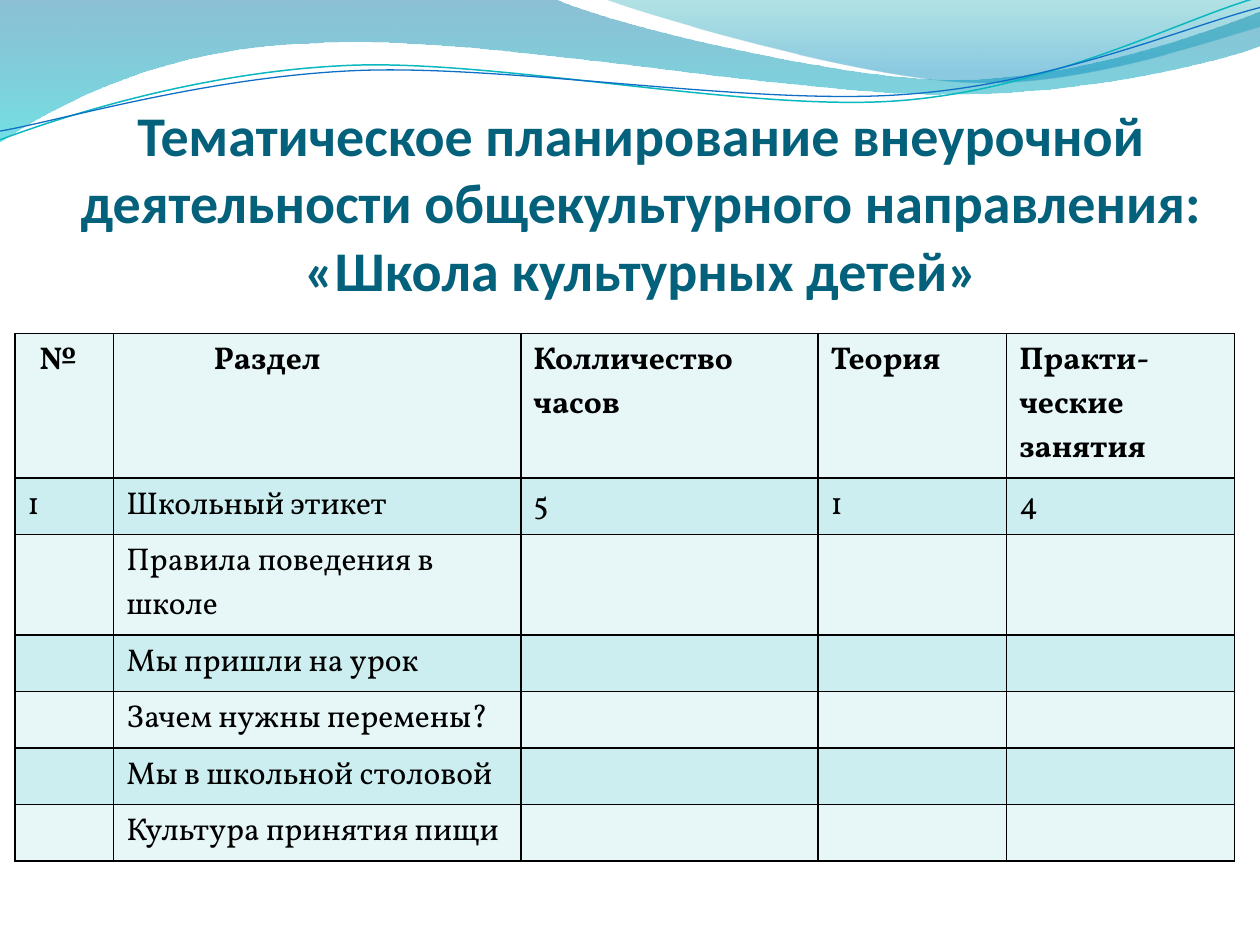
from lxml import etree
from pptx import Presentation
from pptx import util as u
from pptx.dml.color import RGBColor
from pptx.enum import text
from pptx.oxml.ns import qn

COLORS = {
    "title": "04617B", "ink": "000000", "pale": "E7F7F8", "band": "CCEEF1",
    "deep": "0074A1", "aqua": "00C6CF", "teal": "00A1A9", "sky": "008BBF",
    "teal_line": "0AB8BF", "blue_line": "0F6FC6",
}

WIDE_WAVE = [
    (0, 0), (316.8, -0.7),
    (342.7, 12.2, 478.1, 45.4, 545.8, 45.4), (614.2, 45.4, 689.8, 18.7, 720, 6.5),
    (720.7, 25.9),
    (707.8, 31.7, 626.4, 54.7, 537.1, 54), (447.8, 54, 275, 20.2, 185, 24.5),
    (92.9, 25.9, 33.1, 59.8, -0.7, 81.4), (0, 0),
]
RIGHT_WAVE = [
    (344.9, -0.7), (366.5, 7.9, 491, 44.6, 553.7, 46.8),
    (616.3, 49.7, 691.9, 23, 720, 15.1), (720, 0), (344.9, -0.7),
]
TEAL_CURVE = [
    (0, 79.9), (34.6, 67, 113.8, 41, 199.4, 37.4),
    (284.4, 33.8, 427, 64.1, 513.4, 57.6), (599.8, 51.1, 675.4, 10.8, 718.6, -1.4),
]
BLUE_CURVE = [
    (0, 74.9), (33.8, 69.1, 118.1, 43.9, 203.8, 40.3),
    (290.2, 36.7, 429.8, 60.5, 516.2, 54), (601.9, 48.2, 677.5, 15.1, 720, 4.3),
]

HEADERS = ["№", "Раздел", "Колличество часов", "Теория", "Практи-ческие занятия"]
HEADER_INDENTS = [7, 50, 0, 0, 0]
TOPICS = ["Правила поведения в школе", "Мы пришли на урок", "Зачем нужны перемены?",
          "Мы в школьной столовой", "Культура принятия пищи"]
ROWS = [HEADERS, ["1", "Школьный этикет", "5", "1", "4"]]
ROWS += [["", topic, "", "", ""] for topic in TOPICS]
COLUMN_WIDTHS = [56.5, 232.6, 169.9, 107.8, 130.3]
ROW_HEIGHTS = [82.5, 32.3, 57.4] + [32.3] * 4


def color(name):
    return RGBColor.from_string(COLORS[name])


class SlideBuilder:
    """Draws styled elements on the current slide."""

    title_font, title_size = "Calibri", 32
    table_font, table_size = "Vollkorn", 18
    border_width = 1

    def __init__(self, slide):
        self.slide = slide

    def outline(self, segments, close):
        points = [(u.Pt(x), u.Pt(y)) for segment in segments
                  for x, y in zip(segment[::2], segment[1::2])]
        builder = self.slide.shapes.build_freeform(*points[0], scale=1.0)
        builder.add_line_segments(points[1:], close=close)
        shape = builder.convert_to_shape()
        shape.shadow.inherit = False
        steps = iter(list(shape._element.iter(qn("a:lnTo"))))
        for segment in segments[1:]:
            first = next(steps)
            if len(segment) == 6:
                bezier = etree.Element(qn("a:cubicBezTo"))
                first.addprevious(bezier)
                for step in (first, next(steps), next(steps)):
                    bezier.append(step[0])
                    step.getparent().remove(step)
        return shape

    def wave(self, segments, stops):
        shape = self.outline(segments, True)
        shape.line.fill.background()
        shape.fill.gradient()
        shape.fill.gradient_angle = 270
        elements = shape._element.iter(qn("a:gs"))
        for stop, element, (position, name, opacity) in zip(
                shape.fill.gradient_stops, elements, stops):
            stop.position = position
            stop.color.rgb = color(name)
            etree.SubElement(element[0], qn("a:alpha"), val=str(opacity * 1000))

    def curve(self, segments, name, width):
        shape = self.outline(segments, False)
        shape.fill.background()
        shape.line.color.rgb = color(name)
        shape.line.width = u.Pt(width)

    def run(self, paragraph, words, font, size, name, bold):
        run = paragraph.add_run()
        run.text = words
        run.font.name = font
        run.font.size = u.Pt(size)
        run.font.bold = bold
        run.font.color.rgb = color(name)

    def title(self, words, left, top, width, height):
        shape = self.slide.shapes.add_textbox(*map(u.Pt, (left, top, width, height)))
        frame = shape.text_frame
        frame.word_wrap = True
        frame.vertical_anchor = text.MSO_ANCHOR.BOTTOM
        frame.margin_left = frame.margin_right = frame.margin_bottom = 0
        frame.margin_top = u.Pt(3.6)
        paragraph = frame.paragraphs[0]
        paragraph.alignment = text.PP_ALIGN.CENTER
        self.run(paragraph, words, self.title_font, self.title_size, "title", True)

    def borders(self, cell):
        properties = cell._tc.get_or_add_tcPr()
        for index, side in enumerate(("lnL", "lnR", "lnT", "lnB")):
            line = etree.Element(qn(f"a:{side}"), w=str(u.Pt(self.border_width)))
            fill = etree.SubElement(line, qn("a:solidFill"))
            etree.SubElement(fill, qn("a:srgbClr"), val=COLORS["ink"])
            properties.insert(index, line)

    def table(self, rows, left, top, widths, heights, indents):
        frame = self.slide.shapes.add_table(
            len(rows), len(widths),
            *map(u.Pt, (left, top, sum(widths), sum(heights))))
        table = frame.table
        for column, width in zip(table.columns, widths):
            column.width = u.Pt(width)
        for i, (row, height) in enumerate(zip(rows, heights)):
            table.rows[i].height = u.Pt(height)
            for j, words in enumerate(row):
                cell = table.cell(i, j)
                cell.fill.solid()
                cell.fill.fore_color.rgb = color("band" if i % 2 else "pale")
                self.borders(cell)
                paragraph = cell.text_frame.paragraphs[0]
                if i == 0 and indents[j]:
                    paragraph._p.get_or_add_pPr().set("marL", str(u.Pt(indents[j])))
                if words:
                    self.run(paragraph, words, self.table_font, self.table_size,
                             "ink", i == 0)
                else:
                    paragraph.font.size = u.Pt(self.table_size)


def main():
    presentation = Presentation()
    presentation.slide_width, presentation.slide_height = u.Pt(720), u.Pt(540)
    builder = SlideBuilder(presentation.slides.add_slide(presentation.slide_layouts[6]))
    builder.wave(WIDE_WAVE, [(0, "deep", 45), (1, "aqua", 55)])
    builder.wave(RIGHT_WAVE, [(0, "teal", 30), (0.8, "sky", 45)])
    builder.curve(TEAL_CURVE, "teal_line", 0.85)
    builder.curve(BLUE_CURVE, "blue_line", 0.75)
    builder.title("Тематическое планирование внеурочной деятельности "
                  "общекультурного направления: «Школа культурных детей»",
                  42.5, 82.8, 648, 90)
    builder.table(ROWS, 8.5, 190.6, COLUMN_WIDTHS, ROW_HEIGHTS, HEADER_INDENTS)
    presentation.save("out.pptx")


if __name__ == "__main__":
    main()
